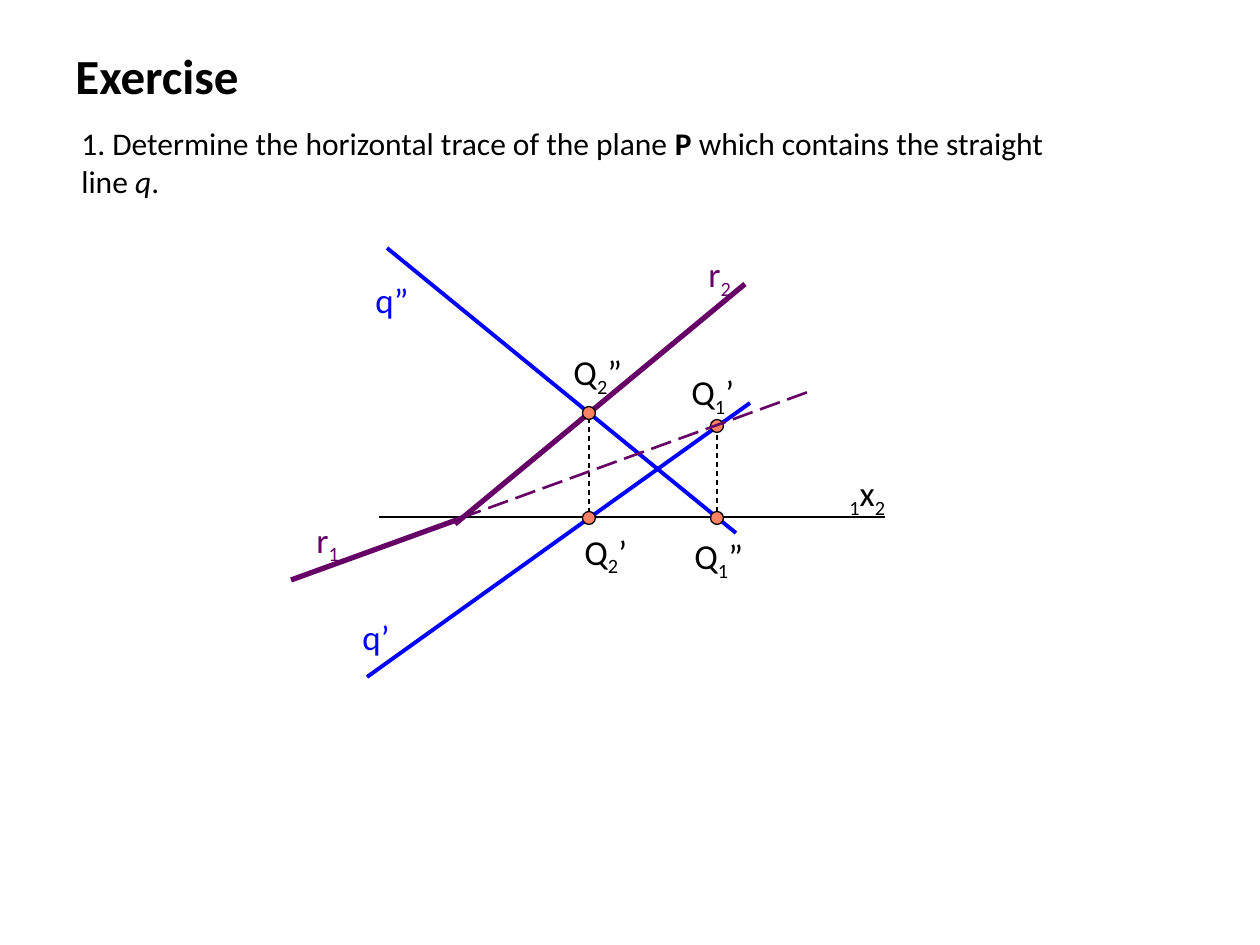
from lxml import etree
from pptx import Presentation
from pptx.dml.color import RGBColor
from pptx.enum.dml import MSO_LINE
from pptx.enum.shapes import MSO_CONNECTOR, MSO_SHAPE
from pptx.oxml.ns import qn
from pptx.util import Emu, Pt

STRAIGHT = MSO_CONNECTOR.STRAIGHT
OVAL = MSO_SHAPE.OVAL
DASH, LONG_DASH = MSO_LINE.DASH, MSO_LINE.LONG_DASH
PX = 914400 / 126

THEME = {
    "font": "Calibri",
    "black": RGBColor(0x00, 0x00, 0x00),
    "blue": RGBColor(0x00, 0x00, 0xFF),
    "purple": RGBColor(0x66, 0x00, 0x66),
    "point": RGBColor(0xFF, 0x81, 0x63),
    "title": Pt(28),
    "body": Pt(18),
    "label": Pt(20),
}


def px(*lengths):
    return [Emu(round(length * PX)) for length in lengths]


def add_text(place, size, color, runs):
    """Add a text box; each run is (text, style), style being "", "bold", "italic" or "sub"."""
    box = slide.shapes.add_textbox(*px(*place))
    box.text_frame.word_wrap = True
    para = box.text_frame.paragraphs[0]
    for text, style in runs:
        span = para.add_run()
        span.text = text
        span.font.name = THEME["font"]
        span.font.size = THEME[size]
        span.font.color.rgb = THEME[color]
        span.font.bold = style == "bold"
        span.font.italic = style == "italic"
        if style == "sub":
            span.font._element.set("baseline", "-25000")


deck = Presentation()
deck.slide_width, deck.slide_height = px(1260, 945)
slide = deck.slides.add_slide(deck.slide_layouts[6])

add_text((63, 39, 220, 72), "title", "black", [("Exercise", "bold")])
add_text((69, 118, 1018, 89), "body", "black", [
    ("1. Determine the horizontal trace of the plane ", ""),
    ("P ", "bold"),
    ("which contains the straight line ", ""),
    ("q", "italic"),
    (".", ""),
])

# Points where line q meets the two projection planes
axis_y = 517
q2_x, q2_y = 589, 413
q1_x, q1_y = 717, 426
point_size = 13

base_lines = [
    ((455, 524, 745, 284), "purple", 3, None),
    ((379, axis_y, 885, axis_y), "black", 0.75, None),
    ((387, 248, 736, 533), "blue", 2.25, None),
    ((367, 677, 750, 403), "blue", 2.25, None),
    ((q2_x, 513, q2_x, 418), "black", 0.75, DASH),
    ((q1_x, 512, q1_x, 427), "black", 0.75, DASH),
]
points = [(q2_x, axis_y + 1), (q2_x, q2_y), (q1_x, axis_y + 1), (q1_x, q1_y)]
trace_lines = [
    ((461, 518, 808, 392), "purple", 1.5, LONG_DASH),
    ((291, 580, 462, 518), "purple", 3, None),
]

# The horizontal trace r1 passes in front of the points
for lines, dots in ((base_lines, points), (trace_lines, [])):
    for ends, color, width, dash in lines:
        line = slide.shapes.add_connector(STRAIGHT, *px(*ends))
        line.line.color.rgb = THEME[color]
        line.line.width = Pt(width)
        if dash:
            line.line.dash_style = dash
        etree.SubElement(line._element.spPr, qn("a:effectLst"))
    for x, y in dots:
        corner = (x - point_size / 2, y - point_size / 2)
        dot = slide.shapes.add_shape(OVAL, *px(*corner, point_size, point_size))
        dot.shadow.inherit = False
        dot.fill.solid()
        dot.fill.fore_color.rgb = THEME["point"]
        dot.line.color.rgb = THEME["black"]
        dot.line.width = Pt(0.75)

labels = [
    (837, 465, 64, "black", [("1", "sub"), ("x", ""), ("2", "sub")]),
    (350, 609, 86, "blue", [("q’", "")]),
    (363, 272, 96, "blue", [("q”", "")]),
    (572, 524, 77, "black", [("Q", ""), ("2", "sub"), ("’", "")]),
    (561, 344, 83, "black", [("Q", ""), ("2", "sub"), ("”", "")]),
    (696, 246, 53, "purple", [("r", ""), ("2", "sub")]),
    (682, 528, 116, "black", [("Q", ""), ("1", "sub"), ("”", "")]),
    (679, 364, 78, "black", [("Q", ""), ("1", "sub"), ("’", "")]),
    (304, 512, 50, "purple", [("r", ""), ("1", "sub")]),
]
for left, top, width, color, runs in labels:
    add_text((left, top, width, 55), "label", color, runs)

deck.save("out.pptx")
